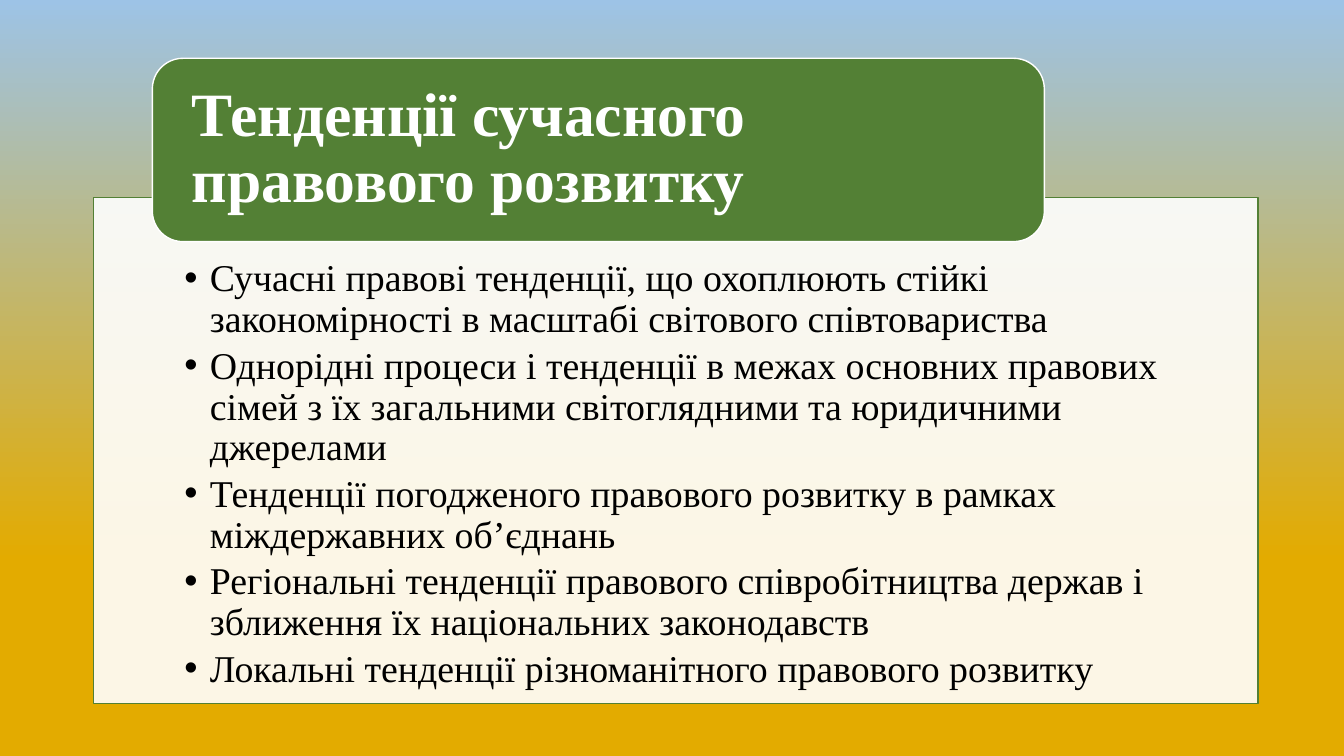
from lxml.etree import SubElement
from pptx import Presentation
from pptx.dml.color import RGBColor
from pptx.enum.shapes import MSO_SHAPE
from pptx.enum.text import MSO_ANCHOR, MSO_AUTO_SIZE, PP_ALIGN
from pptx.oxml.ns import qn
from pptx.util import Cm, Pt

GREEN = RGBColor(0x53, 0x80, 0x35)
GOLD = RGBColor(0xE3, 0xAB, 0x00)
SKY = RGBColor(0x9D, 0xC3, 0xE6)
WHITE = RGBColor(0xFF, 0xFF, 0xFF)
BLACK = RGBColor(0x00, 0x00, 0x00)

HEADING = "Тенденції сучасного правового розвитку"
TRENDS = [
    "Сучасні правові тенденції, що охоплюють стійкі закономірності в масштабі світового співтовариства",
    "Однорідні процеси і тенденції в межах основних правових сімей з їх загальними світоглядними та юридичними джерелами",
    "Тенденції погодженого правового розвитку в рамках міждержавних об’єднань",
    "Регіональні тенденції правового співробітництва держав і зближення їх національних законодавств",
    "Локальні тенденції різноманітного правового розвитку",
]


def apply(target, formats):
    """Set each attribute named in the dict on the target."""
    for attribute, value in formats.items():
        setattr(target, attribute, value)


class TrendSlide:
    """Holds the slide and its style and draws its elements."""

    font_name = "Times New Roman"

    def __init__(self, deck):
        """Add a title-only slide to the deck."""
        self.slide = deck.slides.add_slide(deck.slide_layouts[5])

    def background(self, stops):
        """Fill the background with a gradient rising from the bottom."""
        fill = self.slide.background.fill
        fill.gradient()
        fill.gradient_angle = 90
        for stop, (position, color) in zip(fill.gradient_stops, stops):
            stop.position = position
            stop.color.rgb = color

    def block(self, preset, box, fill, line, opacity=100):
        """Draw a filled and outlined preset shape."""
        block = self.slide.shapes.add_shape(preset, *map(Cm, box))
        block.shadow.inherit = False
        block.fill.solid()
        block.fill.fore_color.rgb = fill
        block.line.color.rgb = line
        block.line.width = Pt(1)
        if opacity < 100:
            color = block.fill._xPr.find(qn("a:solidFill"))[0]
            SubElement(color, qn("a:alpha"), val=str(opacity * 1000))
        return block

    def frame(self, shape, insets, anchor):
        """Prepare the text frame of a shape and return it."""
        sides = ("margin_left", "margin_top", "margin_right", "margin_bottom")
        frame = shape.text_frame
        apply(frame, dict(zip(sides, map(Cm, insets))))
        apply(frame, {"word_wrap": True, "vertical_anchor": anchor,
                      "auto_size": MSO_AUTO_SIZE.NONE})
        return frame

    def text(self, paragraph, wording, size, color, bold=False, level=0, after=0):
        """Fill one paragraph with formatted text."""
        run = paragraph.add_run()
        run.text = wording
        apply(paragraph, {"alignment": PP_ALIGN.LEFT, "line_spacing": 0.9, "level": level,
                          "space_before": Pt(0), "space_after": Pt(after)})
        apply(run.font, {"name": self.font_name, "size": Pt(size), "bold": bold})
        run.font.color.rgb = color

    def title(self, wording, box):
        """Place the title in front of the other shapes."""
        title = self.slide.shapes.title
        apply(title, dict(zip(("left", "top", "width", "height"), map(Cm, box))))
        frame = self.frame(title, (0.79, 0, 0.79, 0), MSO_ANCHOR.MIDDLE)
        self.text(frame.paragraphs[0], wording, 44, WHITE, bold=True)
        self.slide.shapes._spTree.append(title._element)

    def bullets(self, panel, items):
        """Put a bulleted list into the panel."""
        frame = self.frame(panel, (2.29, 1.55, 2.29, 0.53), MSO_ANCHOR.TOP)
        for index, item in enumerate(items):
            paragraph = frame.add_paragraph() if index else frame.paragraphs[0]
            self.text(paragraph, item, 27, BLACK, level=1, after=4)
            properties = paragraph._p.get_or_add_pPr()
            indent = Cm(0.64)
            properties.set("marL", str(indent))
            properties.set("indent", str(-indent))
            SubElement(properties, qn("a:buFont"), typeface="Arial")
            SubElement(properties, qn("a:buChar"), char="•")


def main():
    """Build the slide and save it."""
    deck = Presentation()
    apply(deck, {"slide_width": Cm(33.87), "slide_height": Cm(19.05)})
    trends = TrendSlide(deck)
    trends.background([(0.26, GOLD), (1, SKY)])
    panel = trends.block(MSO_SHAPE.RECTANGLE, (2.36, 4.98, 29.34, 12.75), WHITE, GREEN, opacity=90)
    trends.bullets(panel, TRENDS)
    trends.block(MSO_SHAPE.ROUNDED_RECTANGLE, (3.84, 1.47, 22.48, 4.62), GREEN, WHITE)
    trends.title(HEADING, (4.04, 1.68, 22.02, 4.17))
    deck.save("out.pptx")


if __name__ == "__main__":
    main()
